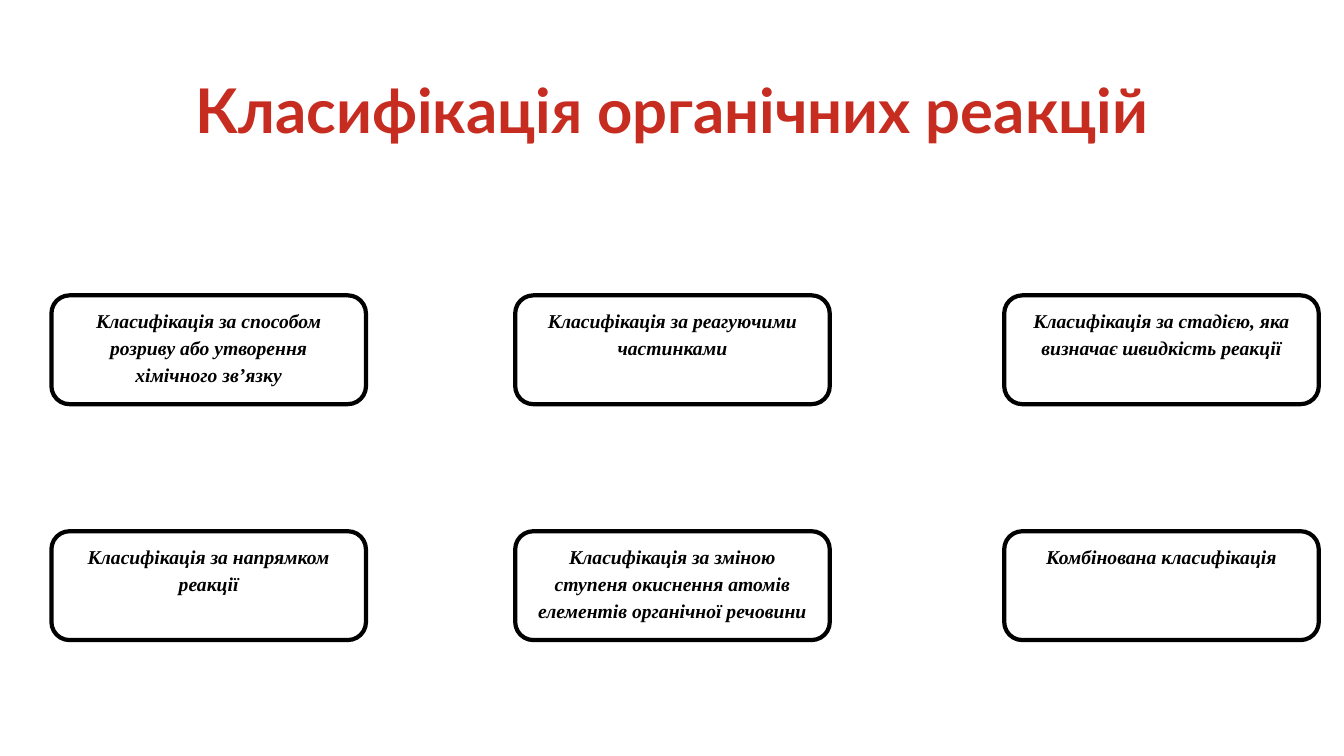
from pptx import Presentation
from pptx.dml.color import RGBColor
from pptx.enum.shapes import MSO_SHAPE
from pptx.enum.text import MSO_ANCHOR, PP_ALIGN
from pptx.util import Emu, Pt

EMU_PER_PX = 9144  # 100 px to the inch
COLORS = {"title": "C72C21", "text": "000000", "line": "000000", "fill": "FFFFFF"}

CARD_LEFTS = (51, 511, 996)
CARD_TOPS = (293, 527)
CARD_WIDTH, CARD_HEIGHT = 312, 108
CARD_ROWS = (
    (
        "Класифікація за способом розриву або утворення хімічного зв’язку",
        "Класифікація за реагуючими частинками",
        "Класифікація за стадією, яка визначає швидкість реакції",
    ),
    (
        "Класифікація за напрямком реакції",
        "Класифікація за зміною ступеня окиснення атомів елементів органічної речовини",
        "Комбінована класифікація",
    ),
)


def px(length):
    return Emu(length * EMU_PER_PX)


def color(name):
    return RGBColor.from_string(COLORS[name])


def write_text(shape, text, *, font, size, color_name, italic=False,
               anchor=MSO_ANCHOR.TOP, line_spacing=1.0, space_after=0):
    """Put one centred bold paragraph into the shape."""
    frame = shape.text_frame
    frame.word_wrap = True
    frame.vertical_anchor = anchor
    paragraph = frame.paragraphs[0]
    paragraph.alignment = PP_ALIGN.CENTER
    paragraph.line_spacing = line_spacing
    paragraph.space_after = Pt(space_after)
    run = paragraph.add_run()
    run.text = text
    run.font.name = font
    run.font.size = Pt(size)
    run.font.bold = True
    run.font.italic = italic
    run.font.color.rgb = color(color_name)


class SlideBuilder:
    """Holds the fonts and the slide being drawn."""

    title_font = "Lato"
    card_font = "Times New Roman"

    def __init__(self, slide):
        self.slide = slide

    def title(self, text, left, top, width, height):
        box = self.slide.shapes.add_textbox(px(left), px(top), px(width), px(height))
        write_text(box, text, font=self.title_font, size=44, color_name="title",
                   anchor=MSO_ANCHOR.MIDDLE, line_spacing=0.9)

    def card(self, text, left, top):
        shape = self.slide.shapes.add_shape(
            MSO_SHAPE.ROUNDED_RECTANGLE,
            px(left), px(top), px(CARD_WIDTH), px(CARD_HEIGHT))
        shape.shadow.inherit = False
        shape.fill.solid()
        shape.fill.fore_color.rgb = color("fill")
        shape.line.color.rgb = color("line")
        shape.line.width = Pt(3)
        write_text(shape, text, font=self.card_font, size=14, color_name="text",
                   italic=True, line_spacing=1.15, space_after=10)


def main():
    presentation = Presentation()
    presentation.slide_width = px(1333)
    presentation.slide_height = px(750)
    builder = SlideBuilder(presentation.slides.add_slide(presentation.slide_layouts[6]))

    builder.title("Класифікація органічних реакцій", 92, 40, 1150, 145)
    for top, row in zip(CARD_TOPS, CARD_ROWS):
        for left, text in zip(CARD_LEFTS, row):
            builder.card(text, left, top)

    presentation.save("out.pptx")


if __name__ == "__main__":
    main()
